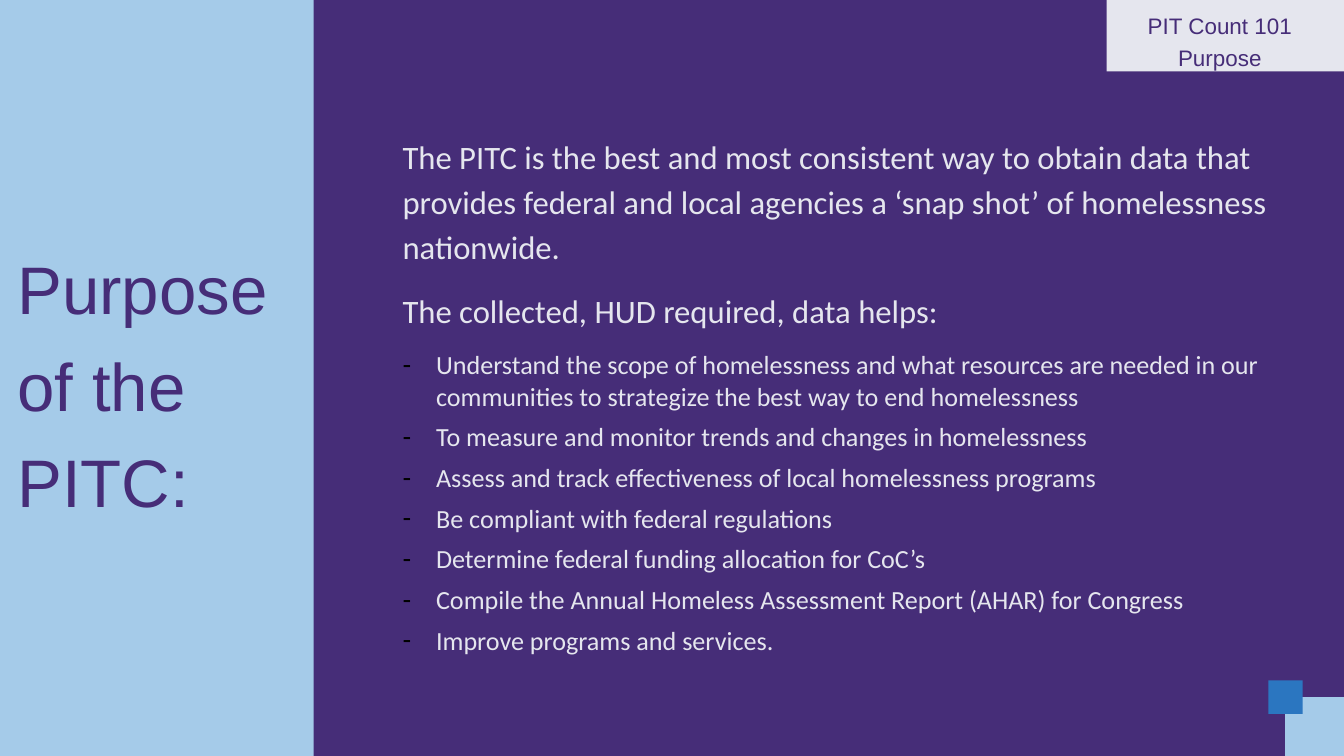
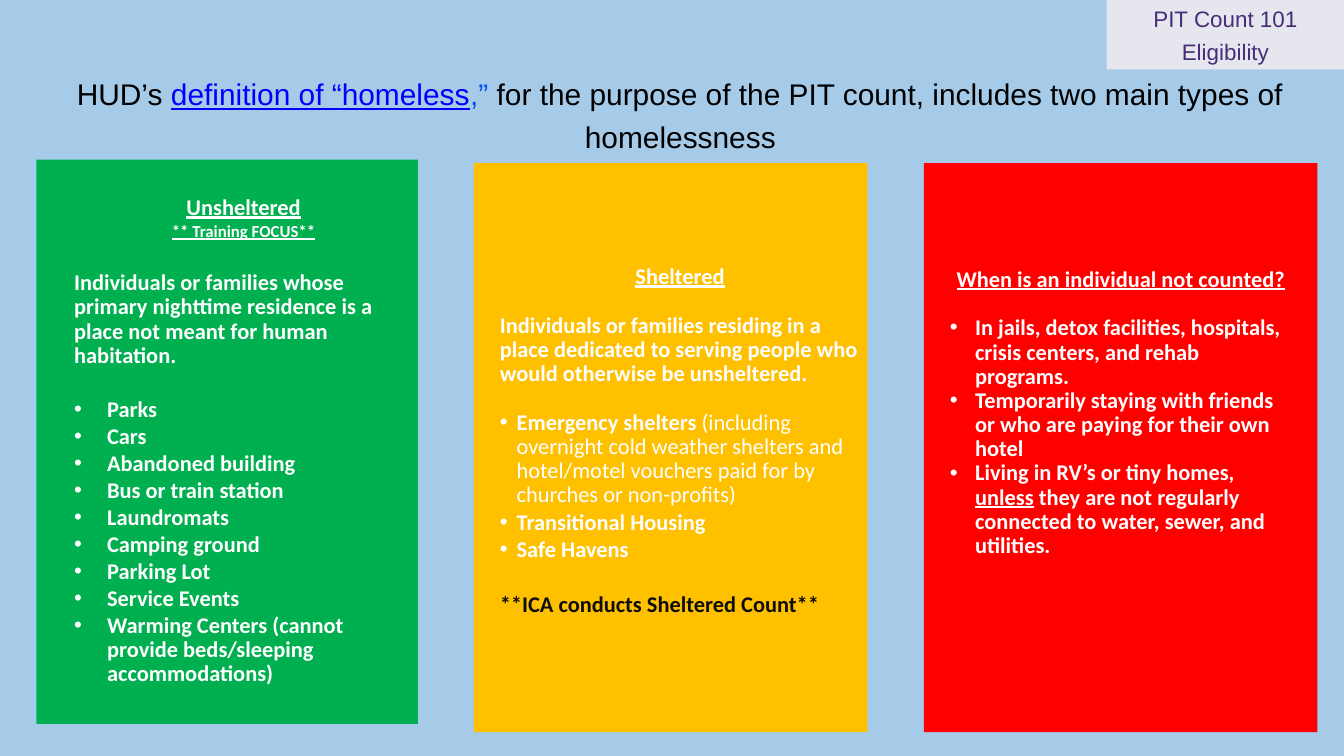
"""Build two slides on the purpose and eligibility rules of the PIT count."""
from dataclasses import dataclass

import pptx
import pptx.dml.color
import pptx.enum.shapes
import pptx.enum.text
import pptx.oxml.ns
import pptx.util
from lxml import etree

PX = 9525
ALIGN = pptx.enum.text.PP_ALIGN
ANCHOR = pptx.enum.text.MSO_ANCHOR


@dataclass(frozen=True)
class Theme:
    purple: str = "462D78"
    sky: str = "A5CBE9"
    blue: str = "2B76C0"
    pale: str = "E5E6EE"
    green: str = "00B050"
    amber: str = "FFC000"
    red: str = "FF0000"
    white: str = "FFFFFF"
    black: str = "000000"
    ink: str = "0D0D0D"
    link: str = "0000FF"
    link_end: str = "0051F2"
    heading_font: str = "Arial"
    body_font: str = "Calibri"
    side_title: int = 72
    lead: int = 35
    top_title: int = 32
    points: int = 28
    card: int = 24
    tag: int = 24
    note: int = 18


theme = Theme()


def add_panel(slide, box, color):
    left, top, width, height = (value * PX for value in box)
    shape = slide.shapes.add_shape(
        pptx.enum.shapes.MSO_SHAPE.RECTANGLE, left, top, width, height)
    shape.shadow.inherit = False
    shape.fill.solid()
    shape.fill.fore_color.rgb = pptx.dml.color.RGBColor.from_string(color)
    shape.line.fill.background()
    slide.shapes.title.element.addprevious(shape.element)


def write(shape, box, paragraphs, base, anchor=ANCHOR.TOP, inset=0, bottom=0):
    shape.left, shape.top, shape.width, shape.height = (value * PX for value in box)
    frame = shape.text_frame
    frame.word_wrap = True
    frame.auto_size = pptx.enum.text.MSO_AUTO_SIZE.NONE
    frame.vertical_anchor = anchor
    frame.margin_left = frame.margin_right = frame.margin_top = inset * PX
    frame.margin_bottom = (inset + bottom) * PX
    for index, settings in enumerate(paragraphs):
        style = {**base, **settings}
        paragraph = frame.paragraphs[0] if index == 0 else frame.add_paragraph()
        properties = paragraph._p.get_or_add_pPr()
        margin, indent = style.get("indent", (0, 0))
        properties.set("marL", str(margin * PX))
        properties.set("indent", str(indent * PX))
        if "bullet" in style:
            bullet_color = etree.SubElement(properties, pptx.oxml.ns.qn("a:buClr"))
            etree.SubElement(bullet_color, pptx.oxml.ns.qn("a:srgbClr"),
                             val=style["bullet_color"])
            etree.SubElement(properties, pptx.oxml.ns.qn("a:buFont"),
                             typeface=theme.heading_font)
            etree.SubElement(properties, pptx.oxml.ns.qn("a:buChar"), char=style["bullet"])
        else:
            etree.SubElement(properties, pptx.oxml.ns.qn("a:buNone"))
        paragraph.alignment = style.get("align", ALIGN.LEFT)
        paragraph.line_spacing = style.get("spacing", 1.0)
        paragraph.space_before = pptx.util.Pt(style.get("before", 0) if index else 0)
        paragraph.space_after = pptx.util.Pt(style.get("after", 0))
        paragraph.font.name = style["font"]
        paragraph.font.size = pptx.util.Pt(style["size"])
        paragraph.font.bold = style.get("bold", False)
        paragraph.font.underline = style.get("underline", False)
        paragraph.font.color.rgb = pptx.dml.color.RGBColor.from_string(style["color"])
        for text, changes in style["runs"]:
            run = paragraph.add_run()
            run.text = text
            if "bold" in changes:
                run.font.bold = changes["bold"]
            if "underline" in changes:
                run.font.underline = changes["underline"]
            if "color" in changes:
                run.font.color.rgb = pptx.dml.color.RGBColor.from_string(changes["color"])


presentation = pptx.Presentation()
presentation.slide_width = 1920 * PX
presentation.slide_height = 1080 * PX
purpose = presentation.slides.add_slide(presentation.slide_layouts[1])
eligibility = presentation.slides.add_slide(presentation.slide_layouts[4])

for slide, background, topic, panel_height, tag_left, tag_top in (
    (purpose, theme.purple, "Purpose", 102, 1573, 9),
    (eligibility, theme.sky, "Eligibility", 99, 1581, 0),
):
    slide.background.fill.solid()
    slide.background.fill.fore_color.rgb = pptx.dml.color.RGBColor.from_string(background)
    add_panel(slide, (1581, 0, 339, panel_height), theme.pale)
    write(slide.shapes.add_textbox(0, 0, 0, 0), (tag_left, tag_top, 339, 93),
          [{"runs": [(line, {})]} for line in ("PIT Count 101", topic)],
          {"font": theme.heading_font, "size": theme.tag, "color": theme.purple,
           "align": ALIGN.CENTER, "spacing": 1.2})

for box, color in (
    ((0, 0, 448, 1080), theme.sky),
    ((1836, 996, 84, 84), theme.sky),
    ((1812, 972, 49, 48), theme.blue),
):
    add_panel(purpose, box, color)

write(purpose.shapes.title, (25, 330, 393, 419),
      [{"runs": [("Purpose of the PITC:", {})]}],
      {"font": theme.heading_font, "size": theme.side_title, "color": theme.purple,
       "spacing": 1.2})

leads = (
    "The PITC is the best and most consistent way to obtain data that provides federal "
    "and local agencies a ‘snap shot’ of homelessness nationwide.",
    "The collected, HUD required, data helps:",
)
benefits = (
    "Understand the scope of homelessness and what resources are needed in our "
    "communities to strategize the best way to end homelessness",
    "To measure and monitor trends and changes in homelessness",
    "Assess and track effectiveness of local homelessness programs",
    "Be compliant with federal regulations",
    "Determine federal funding allocation for CoC’s",
    "Compile the Annual Homeless Assessment Report (AHAR) for Congress",
    "Improve programs and services.",
)
lead_style = {"size": theme.lead, "spacing": 1.15, "after": 10}
benefit_style = {"size": theme.points, "indent": (48, -48), "bullet": "-",
                 "bullet_color": theme.black}
write(purpose.placeholders[1], (575, 187, 1311, 770),
      [{**lead_style, "runs": [(text, {})]} for text in leads]
      + [{**benefit_style, "runs": [(text, {})]} for text in benefits],
      {"font": theme.body_font, "color": theme.pale, "before": 10})

write(eligibility.shapes.title, (107, 98, 1730, 124),
      [{"runs": [
          ("HUD’s ", {}),
          ("definition of “homeless", {"color": theme.link, "underline": True}),
          (",” ", {"color": theme.link_end}),
          ("for the purpose of the PIT count, includes two main types of homelessness", {}),
      ]}],
      {"font": theme.heading_font, "size": theme.top_title, "color": theme.black,
       "align": ALIGN.CENTER, "spacing": 1.2})

heading = {"align": ALIGN.CENTER, "underline": True}
bullet = {"bullet": "•", "bullet_color": theme.white}
places = (
    "Parks", "Cars", "Abandoned building", "Bus or train station", "Laundromats",
    "Camping ground", "Parking Lot", "Service Events",
    "Warming Centers (cannot provide beds/sleeping accommodations)",
)
unsheltered = [
    {**heading, "indent": (49, 0), "runs": [("Unsheltered", {})]},
    {**heading, "indent": (49, 0), "before": 3, "size": theme.note,
     "runs": [("** Training FOCUS**", {})]},
    {"indent": (49, 0), "before": 32.4, "runs": [(
        "Individuals or families whose primary nighttime residence is a place not "
        "meant for human habitation.", {})]},
] + [
    {**bullet, "indent": (96, -47), "before": 3 if index else 32.4, "runs": [(place, {})]}
    for index, place in enumerate(places)
]
shelter_bullet = {**bullet, "indent": (24, -24)}
sheltered = [
    {**heading, "runs": [("Sheltered", {})]},
    {"before": 26.4, "runs": [(
        "Individuals or families residing in a place dedicated to serving people who "
        "would otherwise be unsheltered.", {})]},
    {**shelter_bullet, "before": 26.4, "runs": [
        ("Emergency shelters ", {}),
        ("(including overnight cold weather shelters and hotel/motel vouchers paid for "
         "by churches or non-profits)", {"bold": False})]},
    {**shelter_bullet, "before": 3.5, "runs": [("Transitional Housing", {})]},
    {**shelter_bullet, "before": 3.5, "runs": [("Safe Havens", {})]},
    {"before": 33.4, "color": theme.ink, "runs": [("**ICA conducts Sheltered Count**", {})]},
]
exclusion_bullet = {**bullet, "indent": (36, -36)}
not_counted = [
    {**heading, "runs": [("When is an individual not counted?", {})]},
    {**exclusion_bullet, "before": 26.4, "runs": [(
        "In jails, detox facilities, hospitals, crisis centers, and rehab programs.", {})]},
    {**exclusion_bullet, "runs": [(
        "Temporarily staying with friends or who are paying for their own hotel", {})]},
    {**exclusion_bullet, "runs": [
        ("Living in RV’s or tiny homes, ", {}),
        ("unless", {"underline": True}),
        (" they are not regularly connected to water, sewer, and utilities.", {})]},
]
for index, (panel_box, color, text_box, paragraphs, bottom) in enumerate((
    ((52, 228, 545, 806), theme.green, (51, 302, 545, 657), unsheltered, 0),
    ((677, 233, 562, 813), theme.amber, (708, 302, 527, 657), sheltered, 0),
    ((1320, 233, 562, 813), theme.red, (1351, 276, 500, 657), not_counted, 29),
), start=1):
    add_panel(eligibility, panel_box, color)
    write(eligibility.placeholders[index], text_box, paragraphs,
          {"font": theme.body_font, "size": theme.card, "color": theme.white,
           "bold": True, "spacing": 0.9},
          ANCHOR.MIDDLE, 6, bottom)

spare = eligibility.placeholders[4].element
spare.getparent().remove(spare)

presentation.save("out.pptx")
